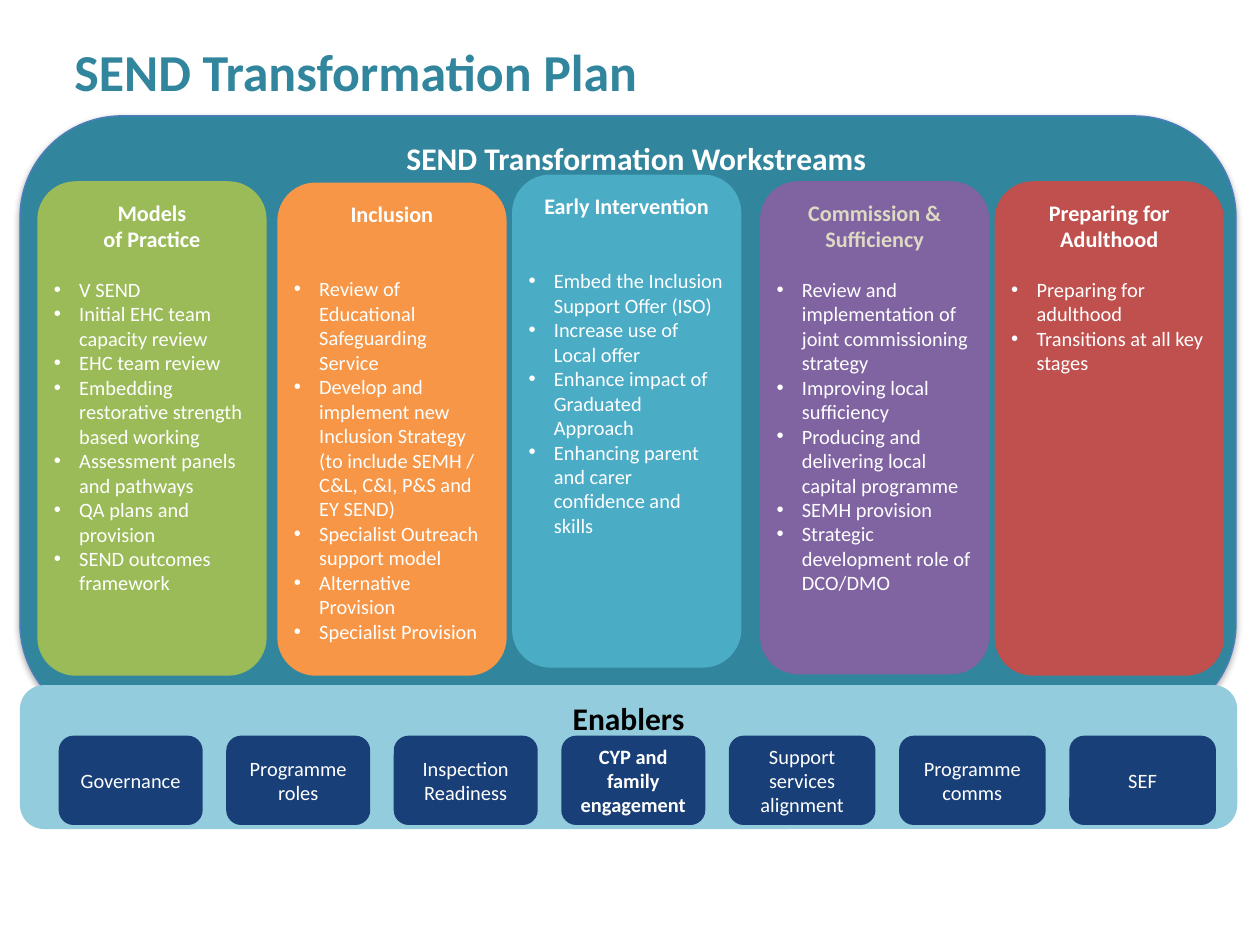
from lxml.etree import SubElement
from pptx import Presentation
from pptx.dml.color import RGBColor
from pptx.enum.shapes import MSO_SHAPE
from pptx.enum.text import MSO_ANCHOR, PP_ALIGN
from pptx.oxml.ns import qn
from pptx.util import Inches, Pt

TEAL, WHITE, NAVY, SAND = "31859C", "FFFFFF", "193F78", "DDD9C3"

# Workstreams: left, top, height, fill, heading colour, heading lines,
# points between heading and list, list
WORKSTREAMS = [
    (0.28, 1.36, 3.71, "9BBB59", WHITE, ["Models", "of Practice"], 13.4,
     ["V SEND", "Initial EHC team capacity review", "EHC team review",
      "Embedding restorative strength based working",
      "Assessment panels and pathways", "QA plans and provision",
      "SEND outcomes framework"]),
    (2.08, 1.37, 3.7, "F79646", WHITE, ["Inclusion"], 26.8,
     ["Review of Educational Safeguarding Service",
      "Develop and implement new Inclusion Strategy "
      "(to include SEMH / C&L, C&I, P&S and EY SEND)",
      "Specialist Outreach support model", "Alternative Provision",
      "Specialist Provision"]),
    (3.84, 1.31, 3.7, "4BACC6", WHITE, ["Early Intervention"], 26.8,
     ["Embed the Inclusion Support Offer (ISO)", "Increase use of Local offer",
      "Enhance impact of Graduated Approach",
      "Enhancing parent and carer confidence and skills"]),
    (5.7, 1.36, 3.7, "8064A2", SAND, ["Commission & Sufficiency"], 13.4,
     ["Review and implementation of joint commissioning strategy",
      "Improving local sufficiency",
      "Producing and delivering local capital programme", "SEMH provision",
      "Strategic development role of DCO/DMO"]),
    (7.46, 1.36, 3.71, "C0504D", WHITE, ["Preparing for Adulthood"], 13.4,
     ["Preparing for adulthood", "Transitions at all key stages"]),
]

# Enablers: label, width, bold
ENABLERS = [
    ("Governance", 1.08, False), ("Programme roles", 1.08, False),
    ("Inspection Readiness", 1.08, False),
    ("CYP and family engagement", 1.08, True),
    ("Support services alignment", 1.1, False),
    ("Programme comms", 1.1, False), ("SEF", 1.1, False),
]


def colour(hex_text):
    return RGBColor.from_string(hex_text)


def add_box(page, kind, box, fill):
    shape = page.shapes.add_shape(kind, *map(Inches, box))
    shape.shadow.inherit = False
    shape.fill.solid()
    shape.fill.fore_color.rgb = colour(fill)
    shape.line.fill.background()
    set_frame(shape.text_frame)
    return shape


def set_frame(frame, **values):
    for name, value in {"word_wrap": True, "vertical_anchor": MSO_ANCHOR.TOP,
                        **values}.items():
        setattr(frame, name, value)


def write(frame, text, size, ink, bold=False, align=PP_ALIGN.CENTER,
          before=0, bullet=False):
    para = frame.paragraphs[0]
    if para.runs:
        para = frame.add_paragraph()
    para.alignment = align
    if before:
        para.space_before = Pt(before)
    if bullet:
        add_bullet(para)
    span = para.add_run()
    span.text = text
    for name, value in {"name": "Calibri", "size": Pt(size), "bold": bold}.items():
        setattr(span.font, name, value)
    span.font.color.rgb = colour(ink)


def add_bullet(para):
    properties = para._p.get_or_add_pPr()
    properties.set("marL", str(Inches(0.19)))
    properties.set("indent", str(-Inches(0.19)))
    SubElement(properties, qn("a:buFont"), typeface="Arial")
    SubElement(properties, qn("a:buChar"), char="•")


def add_soft_shadow(shape):
    effects = shape._element.spPr.find(qn("a:effectLst"))
    shadow = SubElement(effects, qn("a:outerShdw"), blurRad=str(Pt(3.1)),
                        dist=str(Pt(1.8)), dir="5400000", rotWithShape="0")
    ink = SubElement(shadow, qn("a:srgbClr"), val="000000")
    SubElement(ink, qn("a:alpha"), val="35000")


def add_title(page, box):
    title = page.shapes.add_textbox(*map(Inches, box))
    set_frame(title.text_frame)
    write(title.text_frame, "SEND Transformation Plan", 28, TEAL, True, PP_ALIGN.LEFT)


def add_workstream_panel(page, box):
    left, top, width, height = box
    panel = add_box(page, MSO_SHAPE.ROUNDED_RECTANGLE, box, TEAL)
    panel.line.color.rgb = colour("4B7EBC")
    panel.line.width = Pt(0.75)
    add_soft_shadow(panel)
    label = add_box(page, MSO_SHAPE.RECTANGLE,
                    (left + 2.8, top + 0.12, 4.04, 0.39), TEAL)
    write(label.text_frame, "SEND Transformation Workstreams", 17, WHITE, True,
          PP_ALIGN.LEFT)


def add_workstream(page, box, fill, ink, heading, gap, items):
    frame = add_box(page, MSO_SHAPE.ROUNDED_RECTANGLE, box, fill).text_frame
    set_frame(frame, margin_left=Inches(0.04), margin_right=Inches(0.04))
    for line in heading:
        write(frame, line, 12, ink, True)
    for index, item in enumerate(items):
        write(frame, item, 11, WHITE, align=PP_ALIGN.LEFT,
              before=0 if index else gap, bullet=True)


def add_enablers(page, box):
    left, top, width, height = box
    panel = add_box(page, MSO_SHAPE.ROUNDED_RECTANGLE, box, "93CDDD")
    write(panel.text_frame, "Enablers", 17, "000000", True)

    # Row of chips with equal gaps
    chip_left, row_width = left + 0.29, width - 0.45
    gap = (row_width - sum(chip[1] for chip in ENABLERS)) / (len(ENABLERS) - 1)
    for label, chip_width, bold in ENABLERS:
        chip = add_box(page, MSO_SHAPE.ROUNDED_RECTANGLE,
                       (chip_left, top + 0.38, chip_width, 0.67), NAVY)
        set_frame(chip.text_frame, vertical_anchor=MSO_ANCHOR.MIDDLE)
        write(chip.text_frame, label, 11, WHITE, bold)
        chip_left += chip_width + gap


def main():
    deck = Presentation()
    deck.slide_width, deck.slide_height = Inches(9.45), Inches(7.09)
    page = deck.slides.add_slide(deck.slide_layouts[6])
    add_title(page, (0.46, 0.25, 7.98, 0.57))
    add_workstream_panel(page, (0.15, 0.87, 9.12, 4.57))
    for left, top, height, *content in WORKSTREAMS:
        add_workstream(page, (left, top, 1.72, height), *content)
    add_enablers(page, (0.15, 5.14, 9.13, 1.08))
    deck.save("out.pptx")


if __name__ == "__main__":
    main()
